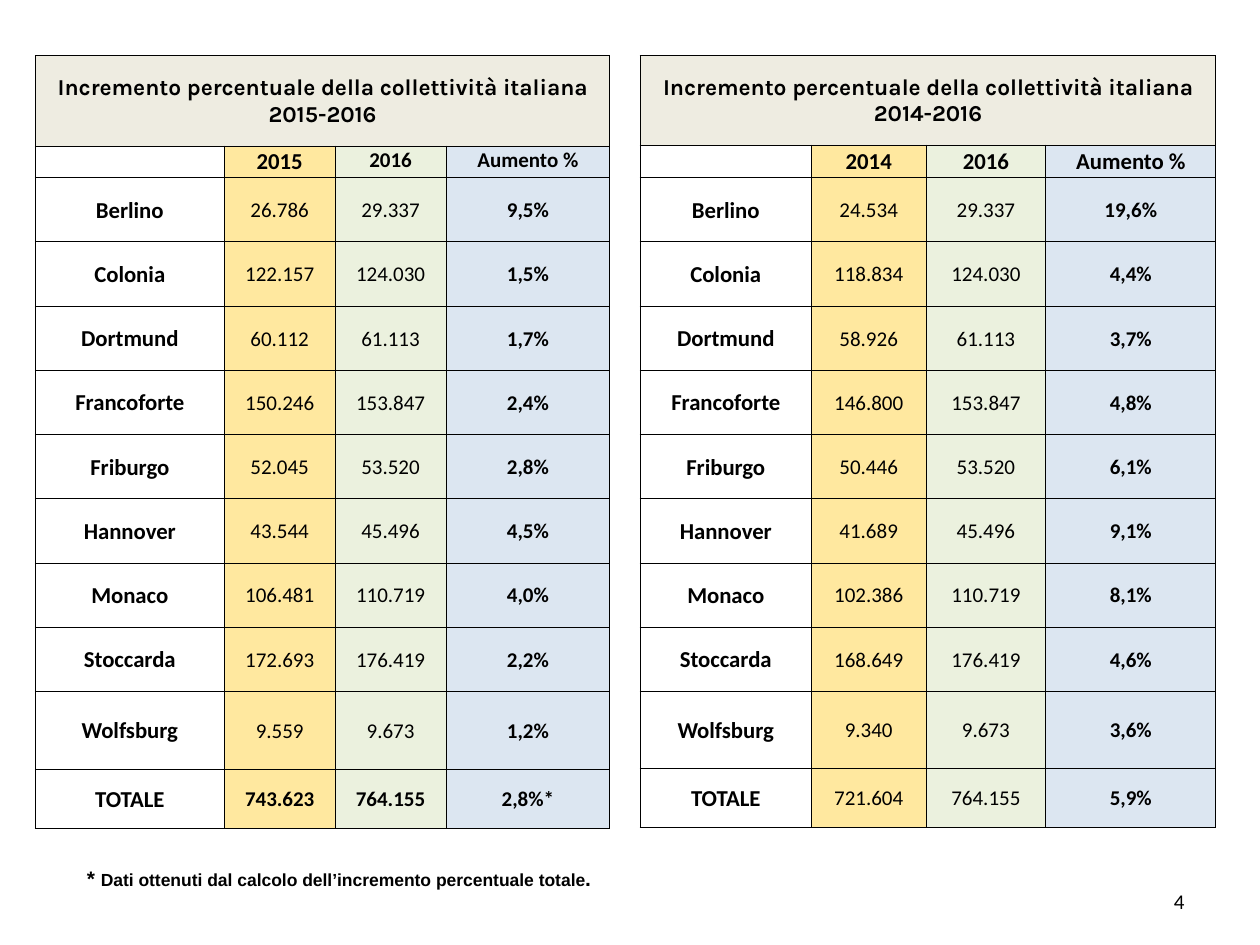
from lxml import etree
from pptx import Presentation
from pptx.dml.color import RGBColor
from pptx.enum.text import MSO_ANCHOR, PP_ALIGN
from pptx.oxml.ns import qn
from pptx.util import Inches, Pt

TOP, MIDDLE = MSO_ANCHOR.TOP, MSO_ANCHOR.MIDDLE
LEFT, CENTER, RIGHT = PP_ALIGN.LEFT, PP_ALIGN.CENTER, PP_ALIGN.RIGHT

CITIES = ["Berlino", "Colonia", "Dortmund", "Francoforte", "Friburgo",
          "Hannover", "Monaco", "Stoccarda", "Wolfsburg", "TOTALE"]
RESIDENTS = {
    "2014": ["24.534", "118.834", "58.926", "146.800", "50.446",
             "41.689", "102.386", "168.649", "9.340", "721.604"],
    "2015": ["26.786", "122.157", "60.112", "150.246", "52.045",
             "43.544", "106.481", "172.693", "9.559", "743.623"],
    "2016": ["29.337", "124.030", "61.113", "153.847", "53.520",
             "45.496", "110.719", "176.419", "9.673", "764.155"],
}
GROWTH = {
    "2014": ["19,6%", "4,4%", "3,7%", "4,8%", "6,1%",
             "9,1%", "8,1%", "4,6%", "3,6%", "5,9%"],
    "2015": ["9,5%", "1,5%", "1,7%", "2,4%", "2,8%",
             "4,5%", "4,0%", "2,2%", "1,2%", "2,8%*"],
}


def color(value):
    """Turn a hex string into a colour."""
    return RGBColor.from_string(value)


class Report:
    """Style and current slide, measured on a grid of 100 columns by 75 rows."""

    ink = "000000"
    title_fill = "EEECE1"
    column_fills = [None, "FFE89F", "EBF1DE", "DCE6F1"]
    body_font, title_font, note_font = "Calibri", "Karla", "Arial"
    large, normal, small = 13, 12, 10

    def __init__(self, deck):
        self.unit = Inches(0.1)
        deck.slide_width, deck.slide_height = self.size(100), self.size(75)
        self.slide = deck.slides.add_slide(deck.slide_layouts[6])

    def size(self, cells):
        return round(cells * self.unit)

    def style(self, font, name, points, bold):
        font.name, font.size, font.bold = name, Pt(points), bold
        font.color.rgb = color(self.ink)

    def text(self, place, spans, name, bold=False, align=LEFT, anchor=TOP):
        box = self.slide.shapes.add_textbox(*map(self.size, place))
        frame = box.text_frame
        frame.word_wrap, frame.vertical_anchor = True, anchor
        para = frame.paragraphs[0]
        para.alignment = align
        self.style(para.font, name, spans[0][1], bold)
        for words, points in spans:
            span = para.add_run()
            span.text = words
            span.font.size = Pt(points)

    def border(self, cell):
        properties = cell._tc.get_or_add_tcPr()
        for side in ("lnL", "lnR", "lnT", "lnB"):
            line = etree.SubElement(properties, qn(f"a:{side}"), w=str(Pt(0.5)))
            fill = etree.SubElement(line, qn("a:solidFill"))
            etree.SubElement(fill, qn("a:srgbClr"), val=self.ink)

    def cell(self, cell, words, fill, name, points, bold, anchor=MIDDLE):
        self.border(cell)
        if fill:
            cell.fill.solid()
            cell.fill.fore_color.rgb = color(fill)
        else:
            cell.fill.background()
        cell.margin_left = cell.margin_right = cell.margin_top = self.size(0.1)
        cell.margin_bottom = 0
        cell.vertical_anchor = anchor
        cell.text = words
        para = cell.text_frame.paragraphs[0]
        para.alignment = CENTER
        self.style(para.font, name, points, bold)

    def table(self, left, top, widths, heights, start, header_sizes,
              header_anchor=MIDDLE, bold_total=False):
        place = map(self.size, (left, top, sum(widths), sum(heights)))
        table = self.slide.shapes.add_table(len(heights), len(widths), *place).table
        table.first_row = table.horz_banding = False
        for column, width in zip(table.columns, widths):
            column.width = self.size(width)
        for row, height in zip(table.rows, heights):
            row.height = self.size(height)

        title = f"Incremento percentuale della collettività italiana {start}-2016"
        for index in range(len(widths)):
            self.cell(table.cell(0, index), "" if index else title,
                      self.title_fill, self.title_font, self.large, True)
        table.cell(0, 0).merge(table.cell(0, len(widths) - 1))

        header = ["", start, "2016", "Aumento %"]
        for index, (words, points) in enumerate(zip(header, header_sizes)):
            self.cell(table.cell(1, index), words, self.column_fills[index],
                      self.body_font, points, True, header_anchor)

        body = zip(CITIES, RESIDENTS[start], RESIDENTS["2016"], GROWTH[start])
        for row, values in enumerate(body, 2):
            total = bold_total and values[0] == CITIES[-1]
            for index, words in enumerate(values):
                self.cell(table.cell(row, index), words, self.column_fills[index],
                          self.body_font, self.normal if index else self.large,
                          index in (0, 3) or total)


def main():
    deck = Presentation()
    report = Report(deck)
    large, normal, small = report.large, report.normal, report.small
    report.text((5.9, 68.2, 92.5, 3),
                [("* ", normal),
                 ("Dati ottenuti dal calcolo dell’incremento percentuale totale", small),
                 (".", normal)], report.note_font, bold=True)
    report.text((71.7, 69.5, 23.3, 4), [("4", normal)], report.body_font,
                align=RIGHT, anchor=MIDDLE)
    cities = [5.1] * 8
    report.table(2.8, 4.4, [15, 8.8, 8.8, 13], [7.2, 2.5, *cities, 6.2, 4.7],
                 "2015", [large, large, normal, normal], TOP, bold_total=True)
    report.table(50.8, 4.4, [13.6, 9.1, 9.5, 13.5], [7.1, 2.6, *cities, 6.1, 4.7],
                 "2014", [large] * 4)
    deck.save("out.pptx")


if __name__ == "__main__":
    main()
